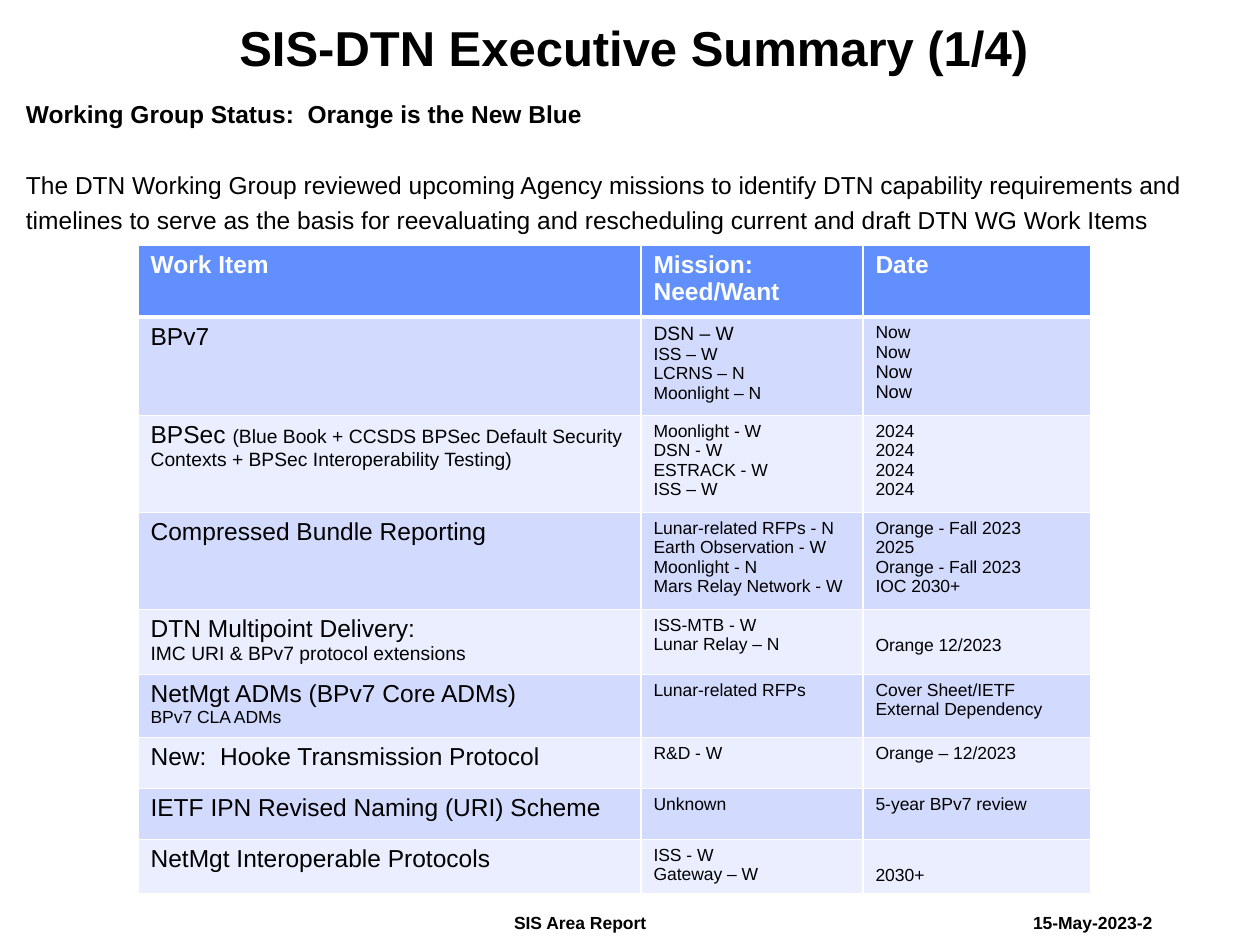
"""Build the SIS-DTN executive summary slide with its work item table."""
from lxml import etree
from pptx import Presentation
from pptx.dml.color import RGBColor
from pptx.enum.text import MSO_ANCHOR, PP_ALIGN
from pptx.oxml.ns import qn
from pptx.util import Emu, Pt

TOP = MSO_ANCHOR.TOP
LEFT, CENTER = PP_ALIGN.LEFT, PP_ALIGN.CENTER
PX = 914400 / 126
COLORS = {"text": "000000", "white": "FFFFFF", "header": "618FFD",
          "odd": "D2DBFE", "even": "EAEEFF"}


def px(n):
    return Emu(round(n * PX))


def add_runs(p, runs, color="text", bold=False):
    for text, size in runs:
        r = p.add_run()
        r.text = text.rstrip("\n")
        r.font.name = "Arial"
        r.font.size = Pt(size)
        r.font.bold = bold
        r.font.color.rgb = RGBColor.from_string(COLORS[color])
        if text.endswith("\n"):
            p.add_line_break()


prs = Presentation()
prs.slide_width, prs.slide_height = px(1260), px(945)
s = prs.slides.add_slide(prs.slide_layouts[6])

# box, margins (left, top), outlined body, alignment, paragraphs (text, size, bold, spacing, after)
boxes = [
    ((1022, 907, 155, 33), (11, 5), False, LEFT,
     [("15-May-2023-2", 10, True, 1.0, 0)]),
    ((503, 907, 158, 33), (11, 5), False, LEFT,
     [("SIS Area Report", 10, True, 1.0, 0)]),
    ((19, 86, 1222, 838), (7, 7), True, LEFT,
     [("Working Group Status:  Orange is the New Blue", 14, True, 1.2, 20.5),
      ("The DTN Working Group reviewed upcoming Agency missions to identify DTN "
       "capability requirements and timelines to serve as the basis for reevaluating "
       "and rescheduling current and draft DTN WG Work Items", 14, False, 1.2, 0)]),
    ((122, 17, 974, 73), (70, 7), True, CENTER,
     [("SIS-DTN Executive Summary (1/4) ", 28, True, 0.9, 0)]),
]
for box, (left, top), body, align, paras in boxes:
    x, y, w, h = box
    if body:
        outline = s.shapes.build_freeform(x, y, scale=PX)
        outline.add_line_segments([(x + w, y), (x + w, y + h), (x, y + h)])
        sp = outline.convert_to_shape()
        sp.shadow.inherit = False
        sp.fill.background()
        sp.line.fill.background()
    else:
        sp = s.shapes.add_textbox(*map(px, box))
    tf = sp.text_frame
    tf.word_wrap = body
    tf.vertical_anchor = TOP
    tf.margin_left, tf.margin_top = px(left), px(top)
    tf.margin_right = tf.margin_bottom = px(top)
    for i, (text, size, bold, spacing, after) in enumerate(paras):
        p = tf.add_paragraph() if i else tf.paragraphs[0]
        p.alignment = align
        p.line_spacing = spacing
        p.space_after = Pt(after)
        add_runs(p, [(text, size)], bold=bold)

# height, work item paragraphs, missions, dates, lines skipped above the dates
rows = [
    (72, [[("Work Item", 14)]], [("Mission: Need/Want", 14)], [("Date", 14)], 0),
    (98, [[("BPv7", 14)]],
     [("DSN – W", 11), "ISS – W", "LCRNS – N", "Moonlight – N"],
     ["Now", "Now", ("Now", 10.5), ("Now", 10.5)], 0),
    (97, [[("BPSec ", 14), ("(Blue Book + CCSDS BPSec Default Security Contexts + "
                            "BPSec Interoperability Testing)", 11)]],
     ["Moonlight - W", "DSN - W", "ESTRACK - W", "ISS – W"], ["2024"] * 4, 0),
    (97, [[("Compressed Bundle Reporting", 14)]],
     ["Lunar-related RFPs - N", "Earth Observation - W", "Moonlight - N",
      "Mars Relay Network - W"],
     ["Orange - Fall 2023", "2025", "Orange - Fall 2023", "IOC 2030+"], 0),
    (65, [[("DTN Multipoint Delivery:\n", 14),
           ("IMC URI & BPv7 protocol extensions", 11)]],
     ["ISS-MTB - W", "Lunar Relay – N"], ["Orange 12/2023"], 1),
    (63, [[("NetMgt ADMs (BPv7 Core ADMs)", 14)], [("BPv7 CLA ADMs", 10)]],
     ["Lunar-related RFPs"], ["Cover Sheet/IETF External Dependency"], 0),
    (51, [[("New:  Hooke Transmission Protocol", 14)]],
     ["R&D - W"], ["Orange – 12/2023"], 0),
    (51, [[("IETF IPN Revised Naming (URI) Scheme", 14)]],
     ["Unknown"], ["5-year BPv7 review"], 0),
    (53, [[("NetMgt Interoperable Protocols", 14)]],
     ["ISS - W", "Gateway – W"], ["2030+"], 1),
]
widths = [503, 222, 228]
table = s.shapes.add_table(len(rows), len(widths), px(138), px(245), px(sum(widths)),
                           px(sum(row[0] for row in rows))).table
for col, width in zip(table.columns, widths):
    col.width = px(width)

for i, (height, item, missions, dates, skip) in enumerate(rows):
    table.rows[i].height = px(height)
    fill = "header" if i == 0 else "odd" if i % 2 else "even"
    lists = [[[line if isinstance(line, tuple) else (line, 10)] for line in lines]
             for lines in (missions, dates)]
    for j, paras in enumerate([item, *lists]):
        cell = table.cell(i, j)
        cell.vertical_anchor = TOP
        cell.margin_top = px(6 + 20 * skip * (j == 2))
        tf = cell.text_frame
        for k, runs in enumerate(paras):
            p = tf.add_paragraph() if k else tf.paragraphs[0]
            add_runs(p, runs, "text" if i else "white", i == 0)
        tcPr = cell._tc.get_or_add_tcPr()
        for side in ("lnL", "lnR", "lnT", "lnB"):
            thick = (i, side) in ((0, "lnB"), (1, "lnT"))
            ln = etree.SubElement(tcPr, qn(f"a:{side}"), w=str(Pt(3 if thick else 1)))
            solid = etree.SubElement(ln, qn("a:solidFill"))
            etree.SubElement(solid, qn("a:srgbClr"), val=COLORS["white"])
        cell.fill.solid()
        cell.fill.fore_color.rgb = RGBColor.from_string(COLORS[fill])

prs.save("out.pptx")
